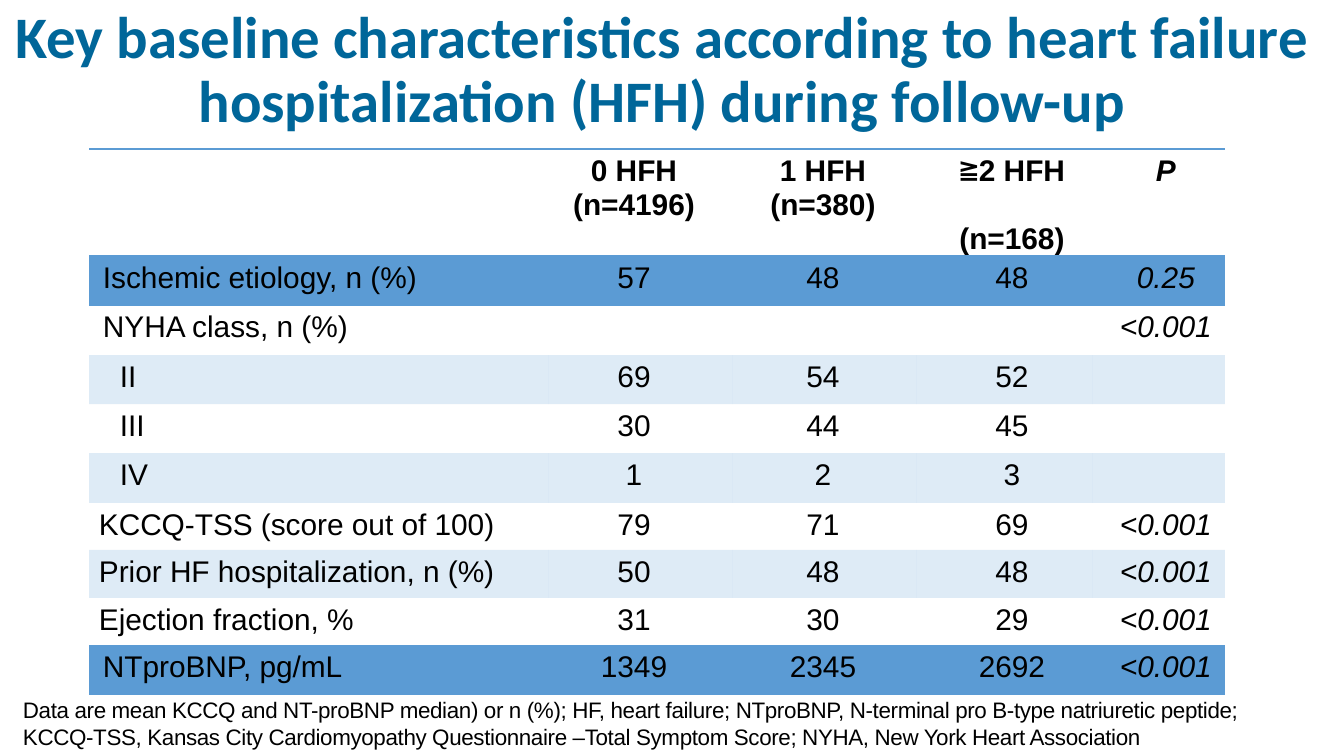
"""Build the slide of baseline characteristics by heart failure hospitalization."""
from lxml.etree import SubElement as Sub
from pptx import Presentation
from pptx.dml.color import RGBColor as Rgb
from pptx.enum.text import PP_ALIGN as Align
from pptx.oxml.ns import qn
from pptx.util import Pt

TITLE = "Key baseline characteristics according to heart failure hospitalization (HFH) during follow-up"
HEAD = [(), ("0 HFH", "(n=4196)"), ("1 HFH", "(n=380)"), ("≧2 HFH", "(n=168)"), ("P",)]
ROWS = [
    (49, 14, "Ischemic etiology, n (%)", "57", "48", "48", "0.25"),
    (50, 14, "NYHA class, n (%)", "", "", "", "<0.001"),
    (49, 31, "II", "69", "54", "52", ""),
    (49, 31, "III", "30", "44", "45", ""),
    (50, 31, "IV", "1", "2", "3", ""),
    (47, 10, "KCCQ-TSS (score out of 100)", "79", "71", "69", "<0.001"),
    (48, 10, "Prior HF hospitalization, n (%)", "50", "48", "48", "<0.001"),
    (47, 10, "Ejection fraction, %", "31", "30", "29", "<0.001"),
    (49, 14, "NTproBNP, pg/mL", "1349", "2345", "2692", "<0.001"),
]
NOTES = [
    "Data are mean KCCQ and NT-proBNP median) or n (%); HF, heart failure; NTproBNP, N-terminal pro B-type natriuretic peptide;",
    "KCCQ-TSS, Kansas City Cardiomyopathy Questionnaire –Total Symptom Score; NYHA, New York Heart Association",
]
COLS = [460, 184, 184, 176, 132]
PADS = [(0, 0), (0, 14), (0, 4), (14, 0), (14, 0)]
TOP = 107
RULED = (1, len(ROWS))
COLORS = {"title": "006699", "text": "000000", "rule": "5B9BD4"}
PLAIN = "{2D5ABB26-0587-4C30-8999-92F81FD0307C}"


def px(n):
    return round(n * 914400 / 134.4)


def style(para, face, size, color="text", bold=False, italic=False):
    font = para.font
    font.name, font.size, font.bold, font.italic = face, Pt(size), bold, italic
    font.color.rgb = Rgb.from_string(COLORS[color])


def add_box(slide, at, lines, inset):
    frame = slide.shapes.add_textbox(*map(px, at)).text_frame
    frame.word_wrap = True
    frame.margin_left = frame.margin_right = frame.margin_bottom = 0
    frame.margin_top = px(inset)
    frame.text = "\n".join(lines)
    return frame.paragraphs


def rule(cell, side):
    line = Sub(cell._tc.get_or_add_tcPr(), qn("a:" + side), w=str(Pt(1)))
    fill = Sub(line, qn("a:solidFill"))
    Sub(fill, qn("a:srgbClr"), val=COLORS["rule"])


def tint(cell):
    cell.fill.solid()
    cell.fill.fore_color.rgb = Rgb.from_string(COLORS["rule"])
    tone = cell._tc.tcPr.find(".//" + qn("a:solidFill") + "/" + qn("a:srgbClr"))
    Sub(tone, qn("a:alpha"), val="20000")


def set_cell(cell, lines, row, col, pad):
    cell.margin_left, cell.margin_right = map(px, pad)
    cell.margin_top, cell.margin_bottom = px(6), 0
    frame = cell.text_frame
    frame.text = "\n".join(lines)
    for para in frame.paragraphs:
        para.alignment = Align.CENTER if col else Align.LEFT
        style(para, "Arial", 16, bold=row == 0, italic=col == 4)
    if row == 0:
        rule(cell, "lnT")
    if row == 0 or row in RULED:
        rule(cell, "lnB")
    if row == 1 or (row > 2 and row % 2):
        tint(cell)
    else:
        cell.fill.background()


def add_grid(slide):
    sizes = [TOP] + [row[0] for row in ROWS]
    shape = slide.shapes.add_table(len(sizes), len(COLS), px(89), px(149), px(sum(COLS)), px(sum(sizes)))
    grid = shape.table
    grid.first_row = grid.horz_banding = False
    grid._tbl.tblPr.find(qn("a:tableStyleId")).text = PLAIN
    for col, width in zip(grid.columns, COLS):
        col.width = px(width)
    for row, high in zip(grid.rows, sizes):
        row.height = px(high)
    for c, lines in enumerate(HEAD):
        set_cell(grid.cell(0, c), lines, 0, c, PADS[c])
    for r, (_, indent, *texts) in enumerate(ROWS, 1):
        for c, text in enumerate(texts):
            set_cell(grid.cell(r, c), [text], r, c, PADS[c] if c else (indent, 0))
    first, last = grid.cell(0, 3).text_frame.paragraphs
    first.runs[0].text = "≧"
    first.runs[0].font.name = "Cambria"
    first.add_run().text = HEAD[3][0][1:]
    last.space_before = Pt(18)


def main():
    deck = Presentation()
    deck.slide_width, deck.slide_height = px(1344), px(756)
    slide = deck.slides.add_slide(deck.slide_layouts[6])
    add_grid(slide)
    for para in add_box(slide, (23, 694, 1262, 58), NOTES, 2):
        style(para, "Arial", 12)
        para.runs[0].font._element.set("spc", "-20")
    title = add_box(slide, (12, -3, 1300, 138), [TITLE], 9)[0]
    title.alignment = Align.CENTER
    title.line_spacing = Pt(34.3)
    style(title, "Calibri", 31.5, "title", bold=True)
    deck.save("out.pptx")


if __name__ == "__main__":
    main()
